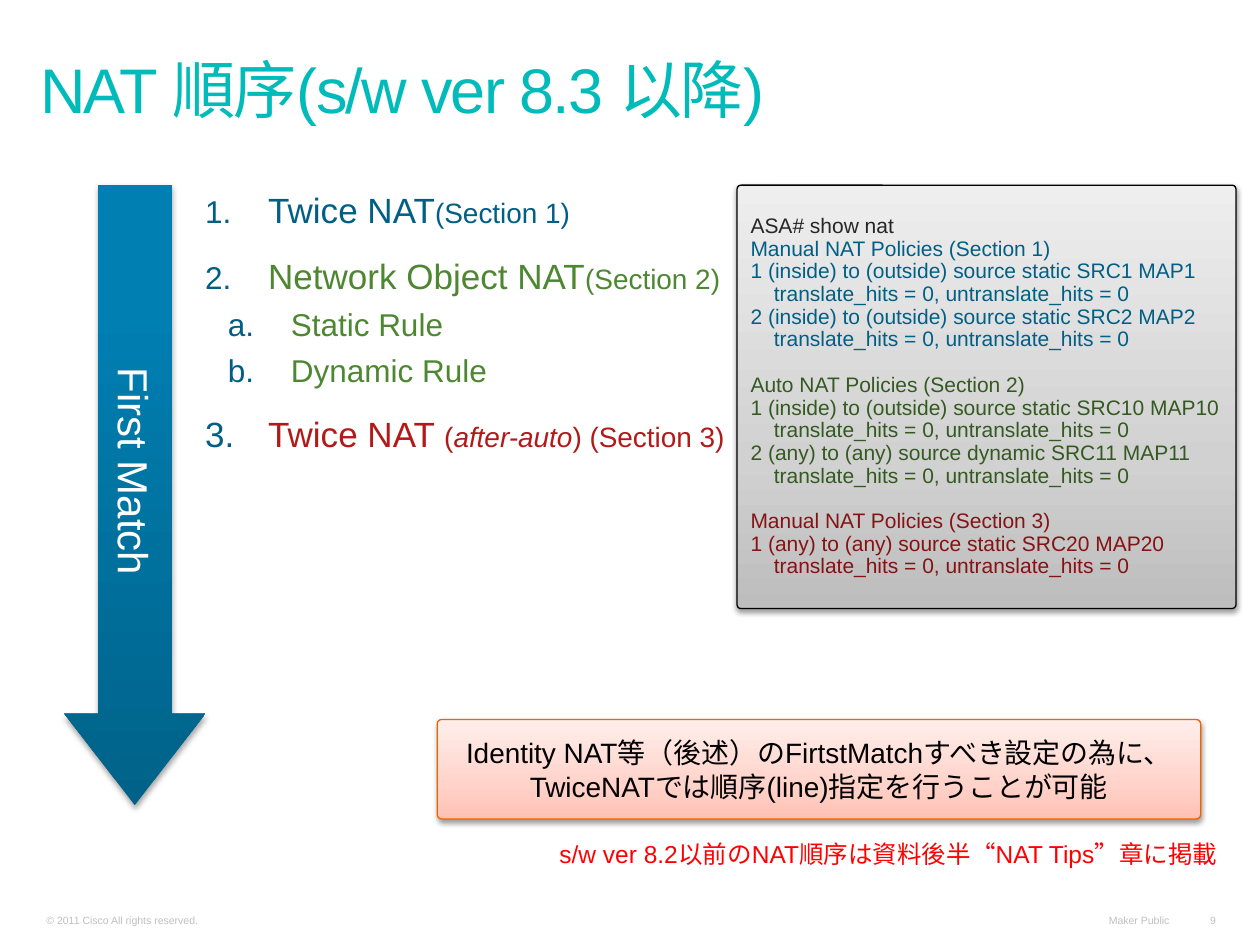
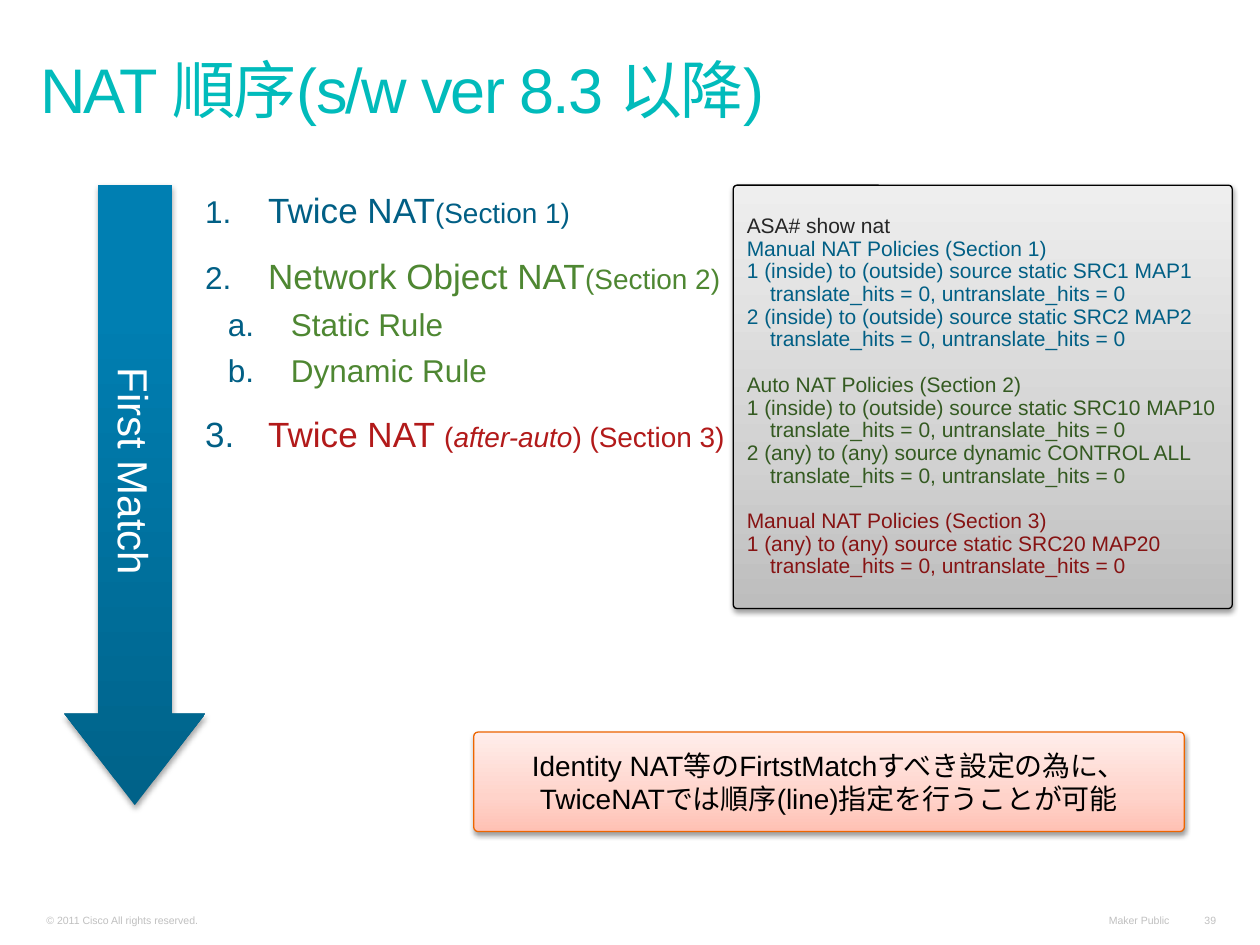
from dataclasses import dataclass

from lxml.etree import SubElement
from pptx import Presentation
from pptx.dml.color import RGBColor
from pptx.enum.shapes import MSO_SHAPE as Preset
from pptx.enum.text import MSO_ANCHOR as Anchor, PP_ALIGN as Align
from pptx.oxml import parse_xml
from pptx.oxml.ns import nsdecls, qn
from pptx.util import Inches, Pt


@dataclass(frozen=True)
class Theme:
    font: str = "Arial"
    # Colours
    title: str = "01BBBB"
    footer: str = "C0C0C0"
    first: str = "015F85"
    second: str = "4E8732"
    third: str = "B21A1A"
    code: str = "262626"
    code_second: str = "345A21"
    code_third: str = "861313"
    black: str = "000000"
    white: str = "FFFFFF"
    remark: str = "FF0000"
    note_line: str = "ED6500"
    # Gradients, from bottom to top: (percent, colour)
    arrow_fill: tuple = ((0, "006289"), (80, "007FB2"), (100, "0080B3"))
    note_fill: tuple = ((0, "FFC1B4"), (35, "FFD3CA"), (100, "FFEEEB"))
    code_fill: tuple = ((0, "BDBDBD"), (35, "D1D1D1"), (100, "EEEEEE"))
    # Type sizes
    title_size: int = 36
    arrow_size: int = 24
    item_size: int = 20
    subitem_size: int = 18
    note_size: int = 16
    remark_size: int = 14
    code_size: int = 12
    footer_size: int = 6


THEME = Theme()
TITLE = "NAT 順序(s/w ver 8.3 以降)"
HITS = "    translate_hits = 0, untranslate_hits = 0"


class SlideBuilder:
    """Holds the theme and the current slide, and draws elements on it."""

    def __init__(self, deck, theme):
        self.deck, self.theme, self.page = deck, theme, None

    def new_page(self, number):
        self.page = self.deck.slides.add_slide(self.deck.slide_layouts[6])
        self.footer(number)
        self.title(TITLE)

    # Shared text handling
    def style(self, font, size, color):
        font.name = self.theme.font
        font.size = Pt(size)
        font.color.rgb = RGBColor.from_string(color)

    def paragraphs(self, frame, lines, size, align=Align.LEFT, spacing=None):
        """Write (text, colour, space before) lines into a text frame."""
        for index, (text, color, before) in enumerate(lines):
            para = frame.paragraphs[0] if index == 0 else frame.add_paragraph()
            para.text = text
            para.alignment = align
            if spacing:
                para.line_spacing = spacing
            if before:
                para.space_before = Pt(before)
            self.style(para.font, size, color)

    def text_box(self, left, top, width, height, anchor=Anchor.TOP):
        box = self.page.shapes.add_textbox(
            Inches(left), Inches(top), Inches(width), Inches(height))
        box.text_frame.word_wrap = True
        box.text_frame.vertical_anchor = anchor
        return box.text_frame

    def label(self, text, place, size, color, align=Align.LEFT, anchor=Anchor.TOP):
        frame = self.text_box(*place, anchor=anchor)
        self.paragraphs(frame, [(text, color, 0)], size, align)
        return frame

    # Title and footer
    def title(self, text):
        theme = self.theme
        frame = self.label(text, (0.22, 0.13, 9.39, 0.92), theme.title_size,
                           theme.title, anchor=Anchor.BOTTOM)
        para = frame.paragraphs[0]
        para.line_spacing = 0.8
        para.runs[0].font._element.set("spc", "-100")

    def footer(self, number):
        theme = self.theme
        parts = (("© 2011 Cisco All rights reserved.", 0.27, 3.6, Align.LEFT),
                 ("Maker Public", 8.38, 1, Align.RIGHT),
                 (str(number), 9.25, 0.5, Align.RIGHT))
        for text, left, width, align in parts:
            frame = self.label(text, (left, 7.2, width, 0.19), theme.footer_size,
                               theme.footer, align, Anchor.BOTTOM)
            frame.margin_top = frame.margin_bottom = Inches(0.04)

    # Gradient shapes with a soft shadow below
    def panel(self, preset, place, adjustments, stops, line=None,
              opacity=38, distance=1.6):
        shape = self.page.shapes.add_shape(preset, *map(Inches, place))
        for index, value in enumerate(adjustments):
            shape.adjustments[index] = value
        gradient = "".join(
            f'<a:gs pos="{percent * 1000}"><a:srgbClr val="{color}"/></a:gs>'
            for percent, color in stops)
        properties = shape._element.spPr
        properties.find(qn("a:prstGeom")).addnext(parse_xml(
            f'<a:gradFill {nsdecls("a")} rotWithShape="1"><a:gsLst>{gradient}'
            '</a:gsLst><a:lin ang="16200000" scaled="0"/></a:gradFill>'))
        if line:
            shape.line.color.rgb = RGBColor.from_string(line)
            shape.line.width = Pt(0.75)
        else:
            shape.line.fill.background()
        shape.shadow.inherit = False
        properties.find(qn("a:effectLst")).append(parse_xml(
            f'<a:outerShdw {nsdecls("a")} blurRad="{Pt(3.1)}" '
            f'dist="{Pt(distance)}" dir="5400000" rotWithShape="0">'
            f'<a:srgbClr val="{self.theme.black}">'
            f'<a:alpha val="{opacity * 1000}"/></a:srgbClr></a:outerShdw>'))
        shape.text_frame.vertical_anchor = Anchor.MIDDLE
        return shape.text_frame

    def match_arrow(self):
        theme = self.theme
        frame = self.panel(Preset.DOWN_ARROW, (0.51, 1.47, 1.12, 4.92),
                           (0.521, 0.648), theme.arrow_fill,
                           opacity=35, distance=1.8)
        frame._txBody.bodyPr.set("vert", "vert")
        self.paragraphs(frame, [("First Match", theme.white, 0)],
                        theme.arrow_size, Align.CENTER)

    def note(self, lines, left, top, width):
        theme = self.theme
        frame = self.panel(Preset.ROUNDED_RECTANGLE, (left, top, width, 0.79),
                           (0.045,), theme.note_fill, theme.note_line)
        self.paragraphs(frame, [(line, theme.black, 0) for line in lines],
                        theme.note_size, Align.CENTER)

    def code_panel(self, left, dynamic_names):
        theme = self.theme
        sections = (
            (theme.first, "Manual NAT Policies (Section 1)",
             ("1 (inside) to (outside) source static SRC1 MAP1",
              "2 (inside) to (outside) source static SRC2 MAP2")),
            (theme.code_second, "Auto NAT Policies (Section 2)",
             ("1 (inside) to (outside) source static SRC10 MAP10",
              f"2 (any) to (any) source dynamic {dynamic_names}")),
            (theme.code_third, "Manual NAT Policies (Section 3)",
             ("1 (any) to (any) source static SRC20 MAP20",)),
        )
        lines = [("ASA# show nat", theme.code, 0)]
        for index, (color, heading, rules) in enumerate(sections):
            lines.append((heading, color, 13 if index else 0))
            for rule in rules:
                lines += [(rule, color, 0), (HITS, color, 0)]
        frame = self.panel(Preset.ROUNDED_RECTANGLE, (left, 1.47, 3.96, 3.36),
                           (0.009,), theme.code_fill, theme.black)
        self.paragraphs(frame, lines, theme.code_size, spacing=0.9)

    # Numbered list of rule sections
    def number(self, para, level, percent):
        para.level = level
        properties = para._p.get_or_add_pPr()
        properties.set("marL", str(Inches(0.68 if level else 0.5)))
        properties.set("indent", str(Inches(-0.5)))
        color = SubElement(properties, qn("a:buClr"))
        SubElement(color, qn("a:srgbClr"), val=self.theme.first)
        SubElement(properties, qn("a:buSzPct"), val=str(percent * 1000))
        SubElement(properties, qn("a:buFont"), typeface="+mj-lt")
        SubElement(properties, qn("a:buAutoNum"),
                   type="alphaLcPeriod" if level else "arabicPeriod")

    def rule_order(self):
        theme = self.theme
        big, middle, small = theme.item_size, theme.subitem_size, theme.note_size
        # (level, number size in percent, colour, spans)
        items = (
            (0, 90, theme.first, (("Twice NAT", big), ("(Section 1)", small))),
            (0, 90, theme.second,
             (("Network Object NAT", big), ("(Section 2)", small))),
            (1, 100, theme.second, (("Static Rule", middle),)),
            (1, 100, theme.second, (("Dynamic Rule", middle),)),
            (0, 100, theme.third,
             (("Twice NAT ", big), ("(", small), ("after-auto", small),
              (") (Section 3)", small))),
        )
        frame = self.text_box(1.53, 1.47, 7.42, 2.43)
        for index, (level, percent, color, spans) in enumerate(items):
            para = frame.add_paragraph() if index else frame.paragraphs[0]
            self.number(para, level, percent)
            para.line_spacing = 0.95
            if index:
                para.space_before = Pt(6 if level else 14.8)
            for text, size in spans:
                span = para.add_run()
                span.text = text
                self.style(span.font, size, color)
                if text == "after-auto":
                    span.font.italic = True


def main():
    deck = Presentation()
    deck.slide_width, deck.slide_height = Inches(10), Inches(7.5)
    builder = SlideBuilder(deck, THEME)
    order_note = "TwiceNATでは順序(line)指定を行うことが可能"

    # NAT order, with a pointer to the older versions
    builder.new_page(9)
    builder.rule_order()
    builder.match_arrow()
    builder.note(["Identity NAT等（後述）のFirtstMatchすべき設定の為に、" + order_note],
                 3.47, 5.71, 6.06)
    builder.code_panel(5.85, "SRC11 MAP11")
    builder.label("s/w ver 8.2以前のNAT順序は資料後半“NAT Tips”章に掲載",
                  (2.69, 6.61, 7.07, 0.34), THEME.remark_size, THEME.remark,
                  Align.RIGHT)

    # NAT order, repeated later in the talk
    builder.new_page(39)
    builder.rule_order()
    builder.match_arrow()
    builder.note(["Identity NAT等のFirtstMatchすべき設定の為に、", order_note],
                 3.76, 5.81, 5.64)
    builder.code_panel(5.82, "CONTROL ALL")

    deck.save("out.pptx")


if __name__ == "__main__":
    main()
